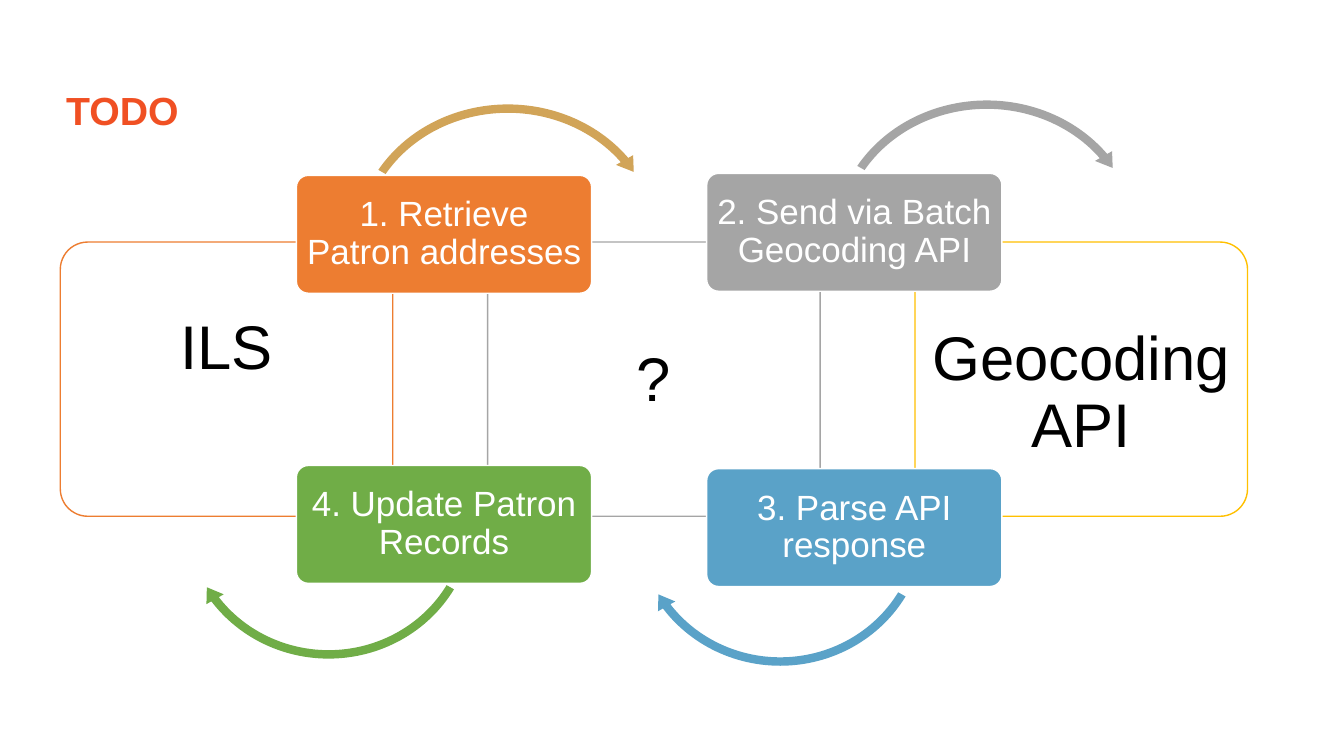
import pptx
import pptx.util
import pptx.dml.color
import pptx.enum.shapes
import pptx.enum.text

Cm = pptx.util.Cm
Pt = pptx.util.Pt
RGB = pptx.dml.color.RGBColor
SHAPE = pptx.enum.shapes.MSO_SHAPE
ALIGN = pptx.enum.text.PP_ALIGN
MIDDLE = pptx.enum.text.MSO_ANCHOR.MIDDLE

WHITE = RGB(0xFF, 0xFF, 0xFF)
BLACK = RGB(0x00, 0x00, 0x00)
RED = RGB(0xF0, 0x50, 0x23)
ORANGE = RGB(0xED, 0x7D, 0x31)
GRAY = RGB(0xA5, 0xA5, 0xA5)
YELLOW = RGB(0xFF, 0xC0, 0x00)
GREEN = RGB(0x70, 0xAD, 0x47)
BLUE = RGB(0x5A, 0xA2, 0xC8)
SAND = RGB(0xD1, 0xA4, 0x58)


class Cycle:
    font = "Arial"
    corner = 0.1
    arc = (0.029, 3.571, 194.673, 125.755, 0.034)

    def __init__(self, slide):
        self.s = slide

    def text(self, sp, text, size, color, align=ALIGN.CENTER, bold=False,
             spacing=0.9, insets=(0.25, 0.2, 0.25, 0.2)):
        tf = sp.text_frame
        left, top, right, bottom = (Cm(v) for v in insets)
        frame = {"word_wrap": True, "vertical_anchor": MIDDLE, "margin_left": left,
                 "margin_top": top, "margin_right": right, "margin_bottom": bottom}
        for name, value in frame.items():
            setattr(tf, name, value)
        p = tf.paragraphs[0]
        p.alignment = align
        p.line_spacing = spacing
        r = p.add_run()
        r.text = text
        for name, value in {"name": self.font, "size": Pt(size), "bold": bold}.items():
            setattr(r.font, name, value)
        r.font.color.rgb = color

    def shape(self, kind, x, y, w, h, fill, line=None):
        sp = self.s.shapes.add_shape(kind, Cm(x), Cm(y), Cm(w), Cm(h))
        sp.shadow.inherit = False
        sp.fill.solid()
        sp.fill.fore_color.rgb = fill
        if line is None:
            sp.line.fill.background()
        else:
            sp.line.color.rgb = line
            sp.line.width = Pt(1)
        return sp

    def title(self, text):
        sp = self.s.shapes.add_textbox(Cm(1.42), Cm(1.83), Cm(30.78), Cm(2.03))
        self.text(sp, text, 28, RED, ALIGN.LEFT, True)

    def panel(self, x, text, line, spacing, top, bottom):
        sp = self.shape(SHAPE.ROUNDED_RECTANGLE, x, 6.1, 8.38, 6.91, WHITE, line)
        sp.adjustments[0] = self.corner
        self.text(sp, text, 44, BLACK, spacing=spacing, insets=(0.1, top, 0.1, bottom))

    def step(self, x, y, text, fill):
        sp = self.shape(SHAPE.ROUNDED_RECTANGLE, x, y, 7.44, 2.97, fill, WHITE)
        sp.adjustments[0] = self.corner
        self.text(sp, text, 25, WHITE, insets=(0.15, 0.1, 0.15, 0.1))

    def arrow(self, x, y, w, h, fill, rotation):
        sp = self.shape(SHAPE.CIRCULAR_ARROW, x, y, w, h, fill)
        sp.rotation = rotation
        for i, value in enumerate(self.arc):
            sp.adjustments[i] = value


def main():
    prs = pptx.Presentation()
    prs.slide_width, prs.slide_height = Cm(33.87), Cm(19.05)
    cycle = Cycle(prs.slides.add_slide(prs.slide_layouts[6]))
    cycle.title("TODO")

    panels = [("ILS", ORANGE, 0.9, 0.2, 1.67),
              ("?", GRAY, 1.0, 0.2, 0.3),
              ("Geocoding API", YELLOW, 0.9, 0.96, 0.2)]
    for i, panel in enumerate(panels):
        cycle.panel(1.52 + 10.77 * i, *panel)

    left, right = 7.47, 17.81
    for step in [(left, 4.42, "1. Retrieve Patron addresses", ORANGE),
                 (right, 4.37, "2. Send via Batch Geocoding API", GRAY),
                 (right, 11.81, "3. Parse API response", BLUE),
                 (left, 11.73, "4. Update Patron Records", GREEN)]:
        cycle.step(*step)

    for x, y, fill in [(8.81, 2.49, SAND), (20.88, 2.39, GRAY)]:
        cycle.arrow(x, y, 7.98, 7.29, fill, 0)
    for x, y, fill in [(15.85, 9.55, BLUE), (4.47, 9.37, GREEN)]:
        cycle.arrow(x, y, 7.62, 7.37, fill, 180)

    prs.save("out.pptx")


if __name__ == "__main__":
    main()
